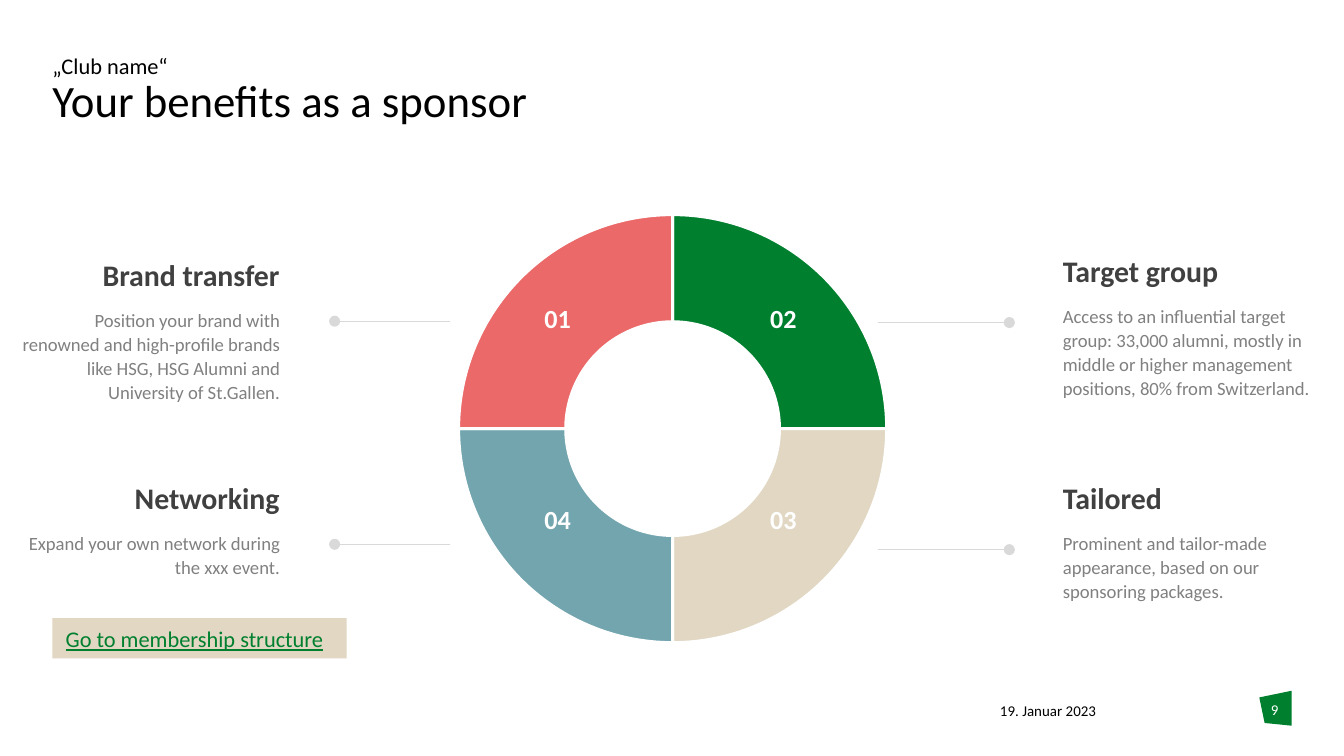
"""Build the sponsor benefits slide: a four-part ring with a text on each side."""
from lxml import etree
from pptx import Presentation
from pptx.chart.data import CategoryChartData
from pptx.dml.color import RGBColor
from pptx.enum.chart import XL_CHART_TYPE
from pptx.enum.shapes import MSO_CONNECTOR, MSO_SHAPE
from pptx.enum.text import MSO_ANCHOR, PP_ALIGN
from pptx.oxml.ns import qn
from pptx.util import Inches, Pt

RING = XL_CHART_TYPE.DOUGHNUT
LINE = MSO_CONNECTOR.STRAIGHT
RECT = MSO_SHAPE.RECTANGLE
MID = MSO_ANCHOR.MIDDLE
LEFT, CENTER, RIGHT = PP_ALIGN.LEFT, PP_ALIGN.CENTER, PP_ALIGN.RIGHT

THEME = {
    "font": "Calibri",
    "black": "000000", "white": "FFFFFF", "green": "00802F", "sand": "E1D7C3",
    "blue": "73A5AF", "red": "EB6969", "rule": "D9D9D9", "head": "404040", "body": "808080",
    "small": 8, "text": 10, "link": 12, "label": 14, "topic": 16, "title": 24,
}

CLUB, TITLE = "„Club name“", "Your benefits as a sponsor"
DATE, PAGE = "19. Januar 2023", "9"
LINK = "Go to membership structure"
PARTS = [("1", 25, "green"), ("2", 25, "sand"), ("3", 25, "blue"), ("4", 25, "red")]
LABELS = [["01", "02"], ["04", "03"]]
SIDES = [
    {"left": 0.02, "width": 2.16, "align": RIGHT, "line": (3.35, 2.49), "drop": 0.53, "topics": [
        (1.86, "Brand transfer", "Position your brand with renowned and high-profile brands "
         "like HSG, HSG Alumni and University of St.Gallen."),
        (3.52, "Networking", "Expand your own network during the xxx event."),
    ]},
    {"left": 7.81, "width": 2.19, "align": LEFT, "line": (6.53, 7.51), "drop": 0.57, "topics": [
        (1.83, "Target group", "Access to an influential target group: 33,000 alumni, "
         "mostly in middle or higher management positions, 80% from Switzerland."),
        (3.52, "Tailored", "Prominent and tailor-made appearance, "
         "based on our sponsoring packages."),
    ]},
]
BADGE = [(9.37, 5.19), (9.61, 5.14), (9.61, 5.4), (9.41, 5.38)]


def tint(name):
    return RGBColor.from_string(THEME[name])


def style(font, size, color, bold=False):
    font.name, font.size, font.bold = THEME["font"], Pt(THEME[size]), bold
    font.color.rgb = tint(color)


def paint(shape, color):
    shape.shadow.inherit = False
    shape.fill.solid()
    shape.fill.fore_color.rgb = tint(color)
    shape.line.fill.background()


def write(slide, box, text, size, color, align=LEFT, bold=False, inset=True, wrap=True):
    frame = slide.shapes.add_textbox(*map(Inches, box)).text_frame
    frame.word_wrap = wrap
    if not inset:
        frame.margin_left = frame.margin_right = frame.margin_top = frame.margin_bottom = 0
    para = frame.paragraphs[0]
    para.text, para.alignment = text, align
    for run in para.runs:
        style(run.font, size, color, bold)
    return para


def add_ring(slide):
    data = CategoryChartData()
    data.categories = [name for name, _, _ in PARTS]
    data.add_series("Series 1", [value for _, value, _ in PARTS])
    box = map(Inches, (2.41, 1.46, 5.19, 3.46))
    chart = slide.shapes.add_chart(RING, *box, data).chart
    chart.has_legend = chart.has_title = False
    style(chart.font, "text", "black")
    plot = chart.plots[0]
    plot.vary_by_categories = True
    for index, (_, _, color) in enumerate(PARTS):
        form = plot.series[0].points[index].format
        form.fill.solid()
        form.fill.fore_color.rgb = tint(color)
        form.line.color.rgb = tint("white")
        form.line.width = Pt(1.5)
    for row, pair in enumerate(LABELS):
        for col, text in enumerate(pair):
            box = (3.85 + 1.68 * col, 2.2 + 1.5 * row, 0.6, 0.47)
            write(slide, box, text, "label", "white", CENTER, True, wrap=False)


def add_rule(slide, start, end, top):
    ends = map(Inches, (start, top, end, top))
    rule = slide.shapes.add_connector(LINE, *ends)
    rule.line.color.rgb = tint("rule")
    rule.line.width = Pt(0.5)
    etree.SubElement(rule._element.spPr.find(qn("a:ln")), qn("a:tailEnd"), type="oval")
    etree.SubElement(rule._element.spPr, qn("a:effectLst"))


def add_side(slide, side):
    left, width, align = side["left"], side["width"], side["align"]
    for top, head, body in side["topics"]:
        add_rule(slide, *side["line"], top + side["drop"])
        write(slide, (left, top, width, 0.37), head, "topic", "head", align, True)
        para = write(slide, (left, top + 0.38, width, 0.82), body, "text", "body", align)
        para.line_spacing = Pt(12.8)


def add_link(slide):
    button = slide.shapes.add_shape(RECT, *map(Inches, (0.39, 4.6, 2.19, 0.3)))
    paint(button, "sand")
    frame = button.text_frame
    frame.text, frame.word_wrap, frame.vertical_anchor = LINK, False, MID
    para = frame.paragraphs[0]
    para.alignment = LEFT
    style(para.runs[0].font, "link", "green")
    para.runs[0].font.underline = True


def add_frame(slide):
    first, *rest = [(Inches(x), Inches(y)) for x, y in BADGE]
    pen = slide.shapes.build_freeform(*first)
    pen.add_line_segments(rest, close=True)
    paint(pen.convert_to_shape(), "green")
    write(slide, (7.44, 5.22, 1.29, 0.2), DATE, "small", "black", inset=False)
    write(slide, (9.37, 5.21, 0.23, 0.3), PAGE, "small", "white", CENTER, inset=False)
    title = write(slide, (0.39, 0.41, 9.22, 0.67), f"{CLUB}\v{TITLE}", "title", "black",
                  inset=False)
    title.line_spacing = 0.9
    title.runs[0].font.size = Pt(THEME["link"])


def main():
    deck = Presentation()
    deck.slide_width, deck.slide_height = Inches(10), Inches(10) * 9 // 16
    slide = deck.slides.add_slide(deck.slide_layouts[6])
    add_frame(slide)
    add_ring(slide)
    for side in SIDES:
        add_side(slide, side)
    add_link(slide)
    deck.save("out.pptx")


if __name__ == "__main__":
    main()
